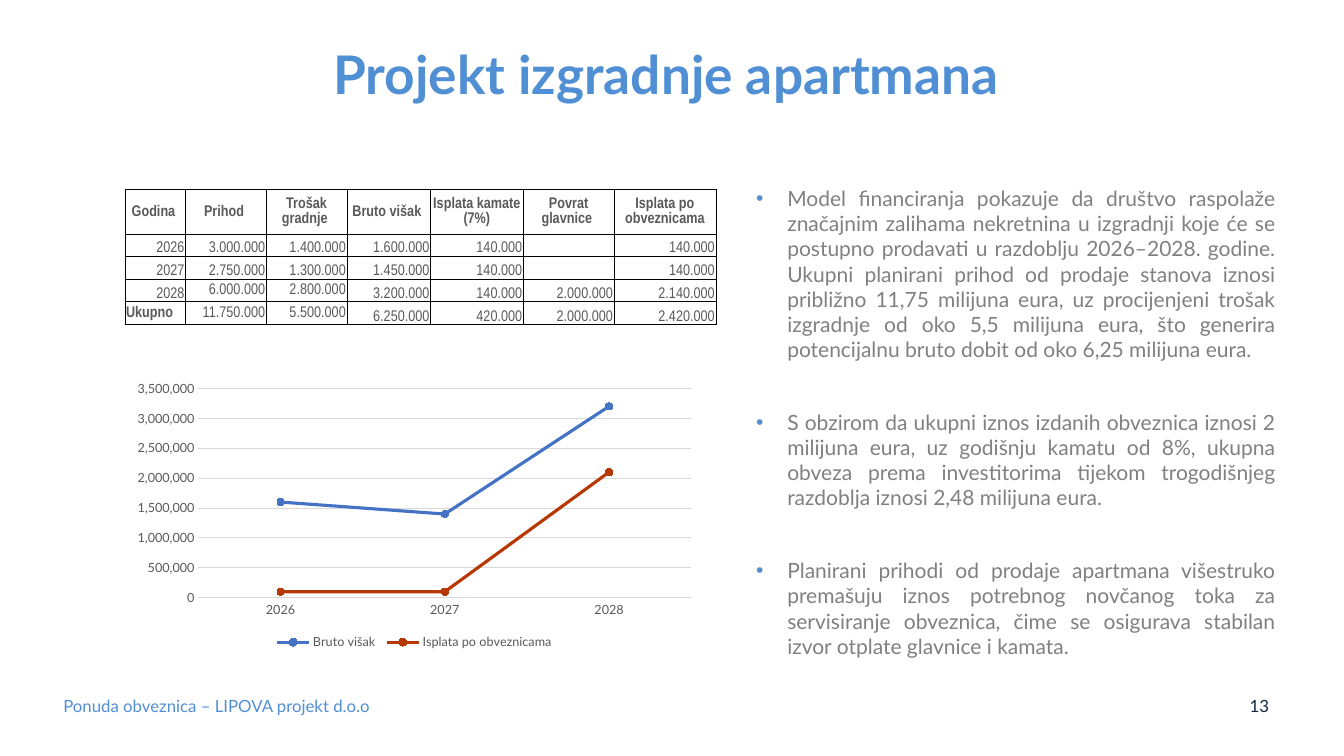
from lxml import etree
from pptx import Presentation
from pptx.chart.data import CategoryChartData
from pptx.dml.color import RGBColor
from pptx.enum.chart import XL_CHART_TYPE, XL_LEGEND_POSITION, XL_MARKER_STYLE, XL_TICK_MARK
from pptx.enum.text import MSO_ANCHOR, MSO_AUTO_SIZE, PP_ALIGN
from pptx.oxml.ns import qn
from pptx.util import Inches, Pt

LEFT, CENTER, RIGHT, JUSTIFY = PP_ALIGN.LEFT, PP_ALIGN.CENTER, PP_ALIGN.RIGHT, PP_ALIGN.JUSTIFY
TOP, MIDDLE, BOTTOM = MSO_ANCHOR.TOP, MSO_ANCHOR.MIDDLE, MSO_ANCHOR.BOTTOM
NO_TICKS = XL_TICK_MARK.NONE

COLORS = {
    "accent": "518FD5", "navy": "0F253E", "body": "808080", "label": "595959",
    "grid": "D9D9D9", "border": "000000", "surplus": "4472C4", "payout": "B83803",
}
TEXT_FONT, TABLE_FONT = "Lato", "Arial Narrow"

POINTS = [
    "Model financiranja pokazuje da društvo raspolaže značajnim zalihama nekretnina u "
    "izgradnji koje će se postupno prodavati u razdoblju 2026–2028. godine. Ukupni planirani "
    "prihod od prodaje stanova iznosi približno 11,75 milijuna eura, uz procijenjeni trošak "
    "izgradnje od oko 5,5 milijuna eura, što generira potencijalnu bruto dobit od oko 6,25 "
    "milijuna eura.",
    "S obzirom da ukupni iznos izdanih obveznica iznosi 2 milijuna eura, uz godišnju kamatu "
    "od 8%, ukupna obveza prema investitorima tijekom trogodišnjeg razdoblja iznosi 2,48 "
    "milijuna eura.",
    "Planirani prihodi od prodaje apartmana višestruko premašuju iznos potrebnog novčanog "
    "toka za servisiranje obveznica, čime se osigurava stabilan izvor otplate glavnice i "
    "kamata.",
]
FINANCES = [
    ["Godina ", "Prihod ", "Trošak gradnje ", "Bruto višak ", "Isplata kamate (7%)",
     "Povrat glavnice ", "Isplata po obveznicama"],
    ["2026", "3.000.000", "1.400.000", "1.600.000", "140.000", "", "140.000"],
    ["2027", "2.750.000", "1.300.000", "1.450.000", "140.000", "", "140.000"],
    ["2028", "6.000.000", "2.800.000", "3.200.000", "140.000", "2.000.000", "2.140.000"],
    ["Ukupno", "11.750.000", "5.500.000", "6.250.000", "420.000", "2.000.000", "2.420.000"],
]
COLUMN_WIDTHS = [0.6, 0.8, 0.8, 0.83, 0.92, 0.9, 1.01]
ROW_HEIGHTS = [0.44, 0.22, 0.23, 0.22, 0.23]
RAISED_CELLS = {(3, 1), (3, 2), (4, 0), (4, 1), (4, 2)}
YEARS = ["2026", "2027", "2028"]
SERIES = [
    ("Bruto višak ", [1600000, 1400000, 3200000], "surplus"),
    ("Isplata po obveznicama", [100000, 100000, 2100000], "payout"),
]


def rgb(name):
    return RGBColor.from_string(COLORS[name])


def style_font(font, size, color, bold=False, face=TEXT_FONT):
    font.name, font.size, font.bold = face, Pt(size), bold
    font.color.rgb = rgb(color)


def add_title(slide, text):
    title = slide.shapes.title
    title.left, title.top = Inches(0.92), Inches(0.4)
    title.width, title.height = Inches(11.5), Inches(0.74)
    frame = title.text_frame
    frame.text = text
    frame.auto_size = MSO_AUTO_SIZE.NONE
    frame.vertical_anchor = MIDDLE
    heading = frame.paragraphs[0]
    heading.alignment, heading.line_spacing = CENTER, 0.9
    style_font(heading.font, 38, "accent", bold=True)


def add_text_frame(slide, left, top, width, height, anchor):
    box = slide.shapes.add_textbox(Inches(left), Inches(top), Inches(width), Inches(height))
    frame = box.text_frame
    frame.word_wrap, frame.vertical_anchor = True, anchor
    return frame


def add_footer(slide, text, left, width, color, align):
    frame = add_text_frame(slide, left, 6.8, width, 0.4, MIDDLE)
    frame.text = text
    frame.paragraphs[0].alignment = align
    style_font(frame.paragraphs[0].font, 12, color)


def add_bullet(paragraph):
    props = paragraph._p.get_or_add_pPr()
    props.set("marL", str(Inches(0.31)))
    props.set("indent", str(Inches(-0.31)))
    bullet_color = etree.SubElement(props, qn("a:buClr"))
    etree.SubElement(bullet_color, qn("a:srgbClr"), val=COLORS["accent"])
    etree.SubElement(props, qn("a:buFont"), typeface="Arial")
    etree.SubElement(props, qn("a:buChar"), char="•")


def add_points(slide, points):
    frame = add_text_frame(slide, 7.4, 1.79, 5.35, 5.21, TOP)
    for index, text in enumerate(points):
        point = frame.add_paragraph() if index else frame.paragraphs[0]
        point.text = text
        add_bullet(point)
        point.alignment, point.space_after = JUSTIFY, Pt(34)
        style_font(point.font, 15, "body")


def add_borders(cell):
    props = cell._tc.get_or_add_tcPr()
    for side in ("lnL", "lnR", "lnT", "lnB"):
        line = etree.SubElement(props, qn(f"a:{side}"), w=str(Pt(0.5)))
        fill = etree.SubElement(line, qn("a:solidFill"))
        etree.SubElement(fill, qn("a:srgbClr"), val=COLORS["border"])


def fill_cell(cell, text, anchor, align, bold):
    add_borders(cell)
    cell.fill.background()
    cell.margin_left = cell.margin_right = cell.margin_top = Inches(0.01)
    cell.margin_bottom = 0
    cell.vertical_anchor = anchor
    cell.text = text
    value = cell.text_frame.paragraphs[0]
    value.alignment = align
    style_font(value.font, 11, "label", bold, TABLE_FONT)
    if not text:  # keeps an empty cell from stretching its row
        etree.SubElement(value._p, qn("a:endParaRPr"), sz="1100")


def add_finance_table(slide):
    table = slide.shapes.add_table(
        len(FINANCES), len(COLUMN_WIDTHS), Inches(1.24), Inches(1.88),
        Inches(sum(COLUMN_WIDTHS)), Inches(sum(ROW_HEIGHTS))).table
    table.first_row = table.horz_banding = False
    for column, width in zip(table.columns, COLUMN_WIDTHS):
        column.width = Inches(width)
    for row, height in zip(table.rows, ROW_HEIGHTS):
        row.height = Inches(height)
    for r, values in enumerate(FINANCES):
        for c, text in enumerate(values):
            header, total = r == 0, text == "Ukupno"
            anchor = MIDDLE if header or (r, c) in RAISED_CELLS else BOTTOM
            align = CENTER if header else LEFT if total else RIGHT
            fill_cell(table.cell(r, c), text, anchor, align, header or total)


def style_line(line, color, width):
    line.color.rgb, line.width = rgb(color), Pt(width)


def add_payout_chart(slide):
    data = CategoryChartData(number_format="#,##0")
    data.categories = YEARS
    for name, values, _ in SERIES:
        data.add_series(name, values)
    chart = slide.shapes.add_chart(
        XL_CHART_TYPE.LINE_MARKERS, Inches(1.25), Inches(3.72),
        Inches(5.72), Inches(2.77), data).chart
    chart.has_title = False
    style_font(chart.font, 10, "border")

    # Legend and axes
    chart.has_legend = True
    chart.legend.position = XL_LEGEND_POSITION.BOTTOM
    chart.legend.include_in_layout = False
    style_font(chart.legend.font, 9, "label")
    years, amounts = chart.category_axis, chart.value_axis
    for axis in (years, amounts):
        axis.major_tick_mark = axis.minor_tick_mark = NO_TICKS
        style_font(axis.tick_labels.font, 9, "label")
    style_line(years.format.line, "grid", 0.75)
    amounts.format.line.fill.background()
    amounts.has_major_gridlines = True
    style_line(amounts.major_gridlines.format.line, "grid", 0.75)
    amounts.tick_labels.number_format = "#,##0"
    amounts.tick_labels.number_format_is_linked = False

    # Series
    plot = chart.plots[0]
    plot.vary_by_categories = False
    for series, (_, _, color) in zip(plot.series, SERIES):
        series.smooth = False
        style_line(series.format.line, color, 2.25)
        marker = series.marker
        marker.style, marker.size = XL_MARKER_STYLE.CIRCLE, 5
        marker.format.fill.solid()
        marker.format.fill.fore_color.rgb = rgb(color)
        style_line(marker.format.line, color, 0.75)


def main():
    deck = Presentation()
    deck.slide_width, deck.slide_height = Inches(13.33), Inches(7.5)
    slide = deck.slides.add_slide(deck.slide_layouts[5])
    add_title(slide, "Projekt izgradnje apartmana ")
    add_footer(slide, "Ponuda obveznica – LIPOVA projekt d.o.o", 0.53, 4.5, "accent", LEFT)
    add_footer(slide, "13", 12.24, 0.5, "navy", CENTER)
    add_points(slide, POINTS)
    add_finance_table(slide)
    add_payout_chart(slide)
    deck.save("out.pptx")


if __name__ == "__main__":
    main()
